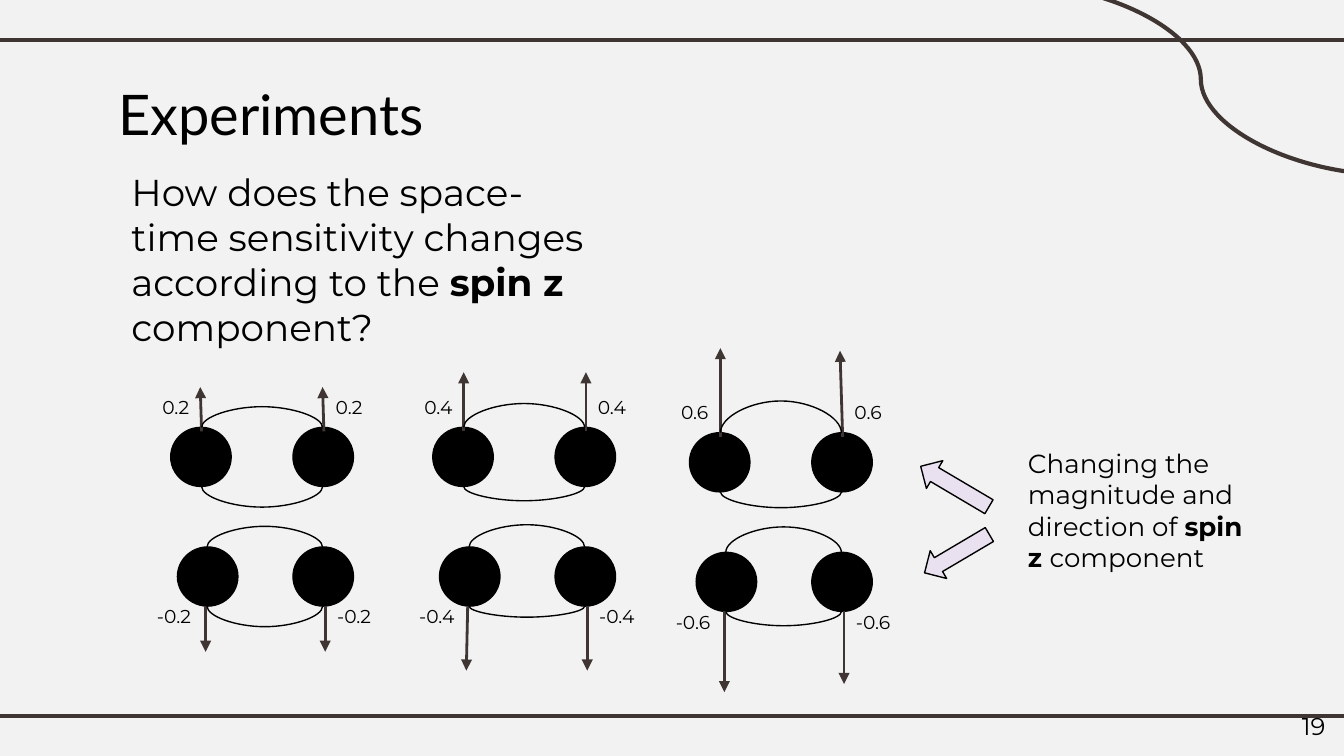
"""Build the slide on how spin z changes space-time sensitivity."""
import pptx
import pptx.dml.color
import pptx.enum.dml
import pptx.enum.shapes
import pptx.enum.text
import pptx.oxml
import pptx.oxml.ns
import pptx.util
from lxml import etree

Inches = pptx.util.Inches
WIDTH, HEIGHT = 10, 10 * 9 / 16
COLOURS = {"page": "F2F2F2", "rule": "3F3533", "ink": "000000", "arrow": "E9E0F0"}

TEXTS = [
    {"at": (0.78, 0.49, 5.15, 0.63), "size": 30, "font": "Lato",
     "runs": [("Experiments", False)]},
    {"at": (0.88, 1.16, 3.63, 1.55), "size": 20,
     "runs": [("How does the space-time sensitivity changes according to the ", False),
              ("spin z", True), (" component?", False)]},
    {"at": (7.55, 3.23, 1.93, 1.14), "size": 14,
     "runs": [("Changing the magnitude and direction of ", False),
              ("spin z ", True), ("component", False)]},
    {"at": (9.36, 5.19, 0.6, 0.43), "size": 13, "align": "RIGHT",
     "runs": [("19", False)]},
]
BLOCK_ARROWS = [((6.81, 3.5, 0.59, 0.24), 210.6), ((6.84, 4, 0.56, 0.24), 149.4)]
RULES = [0.3, 5.33]

BALL = (0.45, 0.44)
ROWS = {
    "up": {"top": 3.18, "balls": (0, 0.91), "stems": (0.23, 1.14), "stem_top": 0.03,
           "labels": (-0.16, 1.13), "label_top": 2.86, "sign": "", "ends": (0.23, 1.13)},
    "down": {"top": 4.07, "balls": (0.05, 0.91), "stems": (0.26, 1.15), "stem_top": 0.44,
             "labels": (-0.2, 1.14), "label_top": 4.42, "sign": "-", "ends": (0.27, 1.13)},
}
GROUPS = [
    {"value": "0.2", "left": 1.27, "drop": 0,
     "up": {"tips": ((-0.01, 2.88), (-0.01, 2.88)), "bows": (-0.13, 0.13)},
     "down": {"tips": ((0, 4.85), (0, 4.85)), "bows": (-0.13, 0.13)}},
    {"value": "0.4", "left": 3.22, "drop": 0,
     "up": {"tips": ((0, 2.77), (0, 2.77)), "bows": (-0.15, 0.09)},
     "down": {"tips": ((-0.01, 4.99), (0, 4.99)), "bows": (-0.14, 0.07)}},
    {"value": "0.6", "left": 5.13, "drop": 0.04,
     "up": {"tips": ((0, 2.59), (-0.02, 2.61)), "bows": (-0.2, 0.1)},
     "down": {"tips": ((0, 5.15), (0, 5.09)), "bows": (-0.16, 0.09)}},
]


def rgb(name):
    return pptx.dml.color.RGBColor.from_string(COLOURS[name])


def add_text(page, at, size, runs, font="Montserrat", align="LEFT"):
    box = page.shapes.add_textbox(*map(Inches, at))
    frame = box.text_frame
    layout = dict.fromkeys(("margin_left", "margin_right", "margin_top", "margin_bottom"),
                           Inches(0.1))
    for name, value in {**layout, "word_wrap": True}.items():
        setattr(frame, name, value)
    para = frame.paragraphs[0]
    para.alignment = getattr(pptx.enum.text.PP_ALIGN, align)
    for words, bold in runs:
        span = para.add_run()
        span.text = words
        look = {"name": font, "size": pptx.util.Pt(size), "bold": bold}
        for name, value in look.items():
            setattr(span.font, name, value)
        span.font.color.rgb = rgb("ink")


def add_solid(page, kind, at, fill, rotation=0):
    shape = page.shapes.add_shape(getattr(pptx.enum.shapes.MSO_SHAPE, kind), *map(Inches, at))
    shape.fill.solid()
    shape.fill.fore_color.rgb = rgb(fill)
    shape.line.color.rgb = rgb("ink")
    shape.line.width = pptx.util.Pt(0.75)
    shape.rotation = rotation
    shape.shadow.inherit = False
    return shape


def add_line(page, ends, colour, weight, kind="STRAIGHT", head=False):
    line = page.shapes.add_connector(
        getattr(pptx.enum.shapes.MSO_CONNECTOR, kind), *map(Inches, ends))
    line.line.color.rgb = rgb(colour)
    line.line.width = pptx.util.Pt(weight)
    if head:
        etree.SubElement(line.line._get_or_add_ln(), pptx.oxml.ns.qn("a:tailEnd"),
                         type="triangle")
    etree.SubElement(line._element.spPr, pptx.oxml.ns.qn("a:effectLst"))
    return line


def add_bow(page, balls, site, left, right, level, depth):
    middle, span, thin = (left + right) / 2, right - left, 0.001
    bow = add_line(page, (middle, level - span / 2, middle + thin, level + span / 2),
                   "ink", 0.75, "CURVE")
    frame = bow._element.spPr.find(pptx.oxml.ns.qn("a:xfrm"))
    frame.set("rot", str(270 * 60000))
    frame.set("flipH", "1")
    guides = bow._element.spPr.prstGeom.get_or_add_avLst()
    etree.SubElement(guides, pptx.oxml.ns.qn("a:gd"), name="adj1",
                     fmla=f"val {round(depth / thin * 100000)}")
    joints = bow._element.nvCxnSpPr.cNvCxnSpPr
    for tag, ball in zip(("a:stCxn", "a:endCxn"), balls):
        etree.SubElement(joints, pptx.oxml.ns.qn(tag), id=str(ball.shape_id), idx=str(site))


def add_pair(page, group, name):
    row, own, left = ROWS[name], group[name], group["left"]
    top = row["top"] + group["drop"]
    balls = [add_solid(page, "OVAL", (left + x, top, *BALL), "ink") for x in row["balls"]]
    for stem, label, (drift, tip) in zip(row["stems"], row["labels"], own["tips"]):
        x = left + stem
        add_line(page, (x, top + row["stem_top"], x + drift, tip), "rule", 1.5, head=True)
        add_text(page, (left + label, row["label_top"] + group["drop"], 0.6, 0.37), 10,
                 [(row["sign"] + group["value"], False)])
    start, end = (left + x for x in row["ends"])
    for site, level, depth in zip((0, 4), (top, top + BALL[1]), own["bows"]):
        add_bow(page, balls, site, start, end, level, depth)


def main():
    deck = pptx.Presentation()
    deck.slide_width, deck.slide_height = Inches(WIDTH), Inches(HEIGHT)
    page = deck.slides.add_slide(deck.slide_layouts[6])
    page.background.fill.solid()
    page.background.fill.fore_color.rgb = rgb("page")
    for y in RULES:
        add_line(page, (-0.08, y, WIDTH + 0.08, y), "rule", 2.25)
    add_line(page, (7.53, -0.12, 10.34, 1.3), "rule", 2.25, "CURVE")
    for text in TEXTS:
        add_text(page, **text)
    for at, rotation in BLOCK_ARROWS:
        add_solid(page, "RIGHT_ARROW", at, "arrow", rotation)
    for group in GROUPS:
        for name in ROWS:
            add_pair(page, group, name)
    deck.save("out.pptx")


if __name__ == "__main__":
    main()
